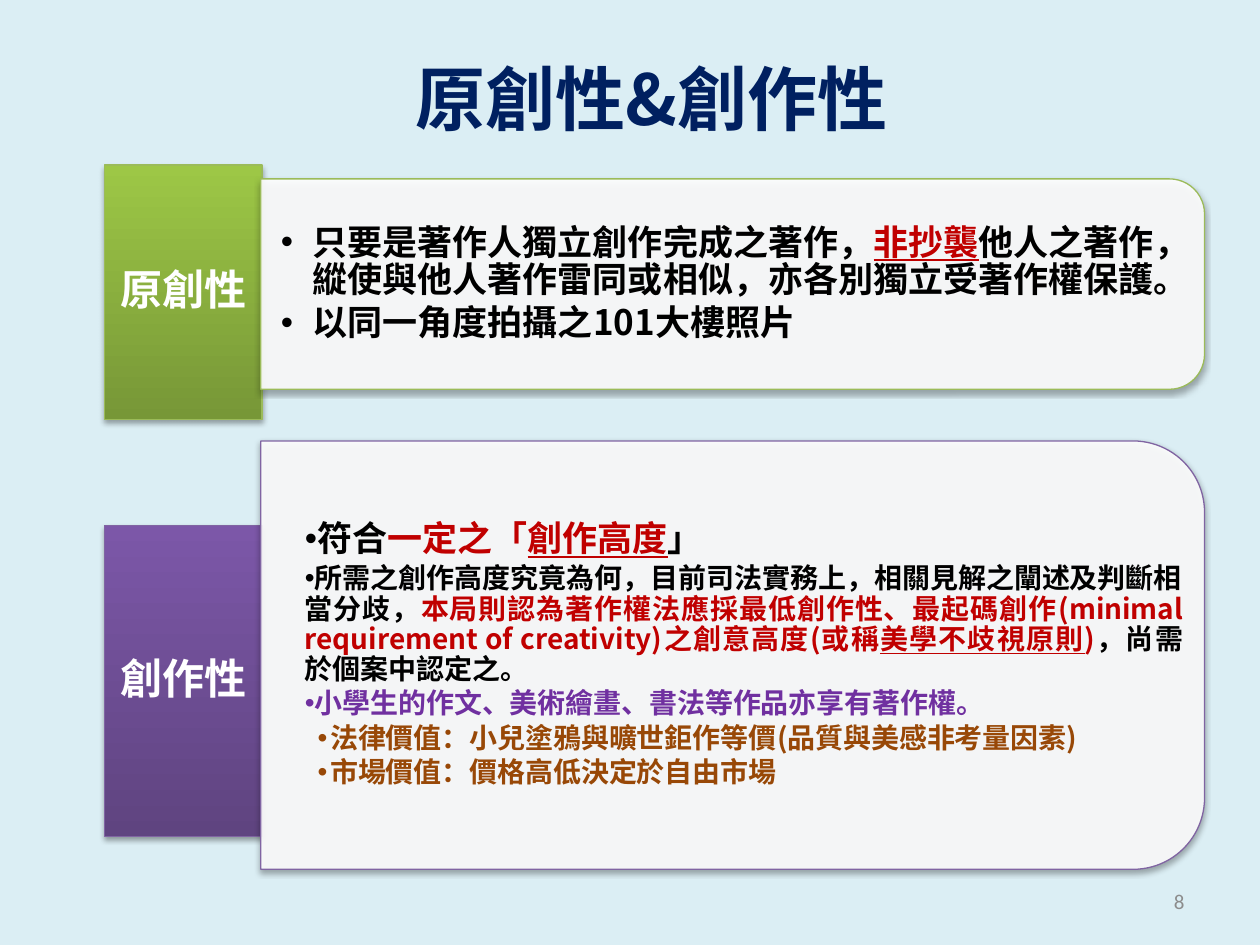
from dataclasses import dataclass

import lxml.etree
import pptx
import pptx.dml.color
import pptx.enum.shapes
import pptx.enum.text
import pptx.oxml
import pptx.oxml.ns
import pptx.util

COLUMNS, ROWS = 100, 75
CELL = pptx.util.Inches(0.1)
ALIGN = pptx.enum.text.PP_ALIGN
SHAPE = pptx.enum.shapes.MSO_SHAPE


@dataclass(frozen=True)
class Theme:
    font: str = "Noto Sans CJK SC"
    number_font: str = "Calibri"
    background: str = "DBEEF4"
    navy: str = "002060"
    black: str = "000000"
    white: str = "FFFFFF"
    red: str = "C00000"
    purple: str = "7030A0"
    brown: str = "984807"
    gray: str = "8C8C8C"
    green_tab: tuple = ("9DC746", "779737", "9BBB59")
    purple_tab: tuple = ("7C57A8", "5F4480", "8064A2")
    title_size: int = 40
    label_size: int = 24
    lead_size: int = 20
    detail_size: int = 16
    number_size: int = 12


THEME = Theme()


def rgb(color):
    return pptx.dml.color.RGBColor.from_string(color)


def grid(*cells):
    return [round(cell * CELL) for cell in cells]


def place(item, cells):
    item.left, item.top, item.width, item.height = grid(*cells)


def add_run(paragraph, text, size, color, bold=True, underline=None, font=THEME.font):
    run = paragraph.add_run()
    run.text = text
    run.font.size = pptx.util.Pt(size)
    run.font.bold = bold
    run.font.underline = underline
    run.font.color.rgb = rgb(color)
    run.font.name = font
    east_asian = lxml.etree.SubElement(run.font._element, pptx.oxml.ns.qn("a:ea"))
    east_asian.set("typeface", font)


def set_frame(frame, insets=None):
    frame.word_wrap = True
    frame.auto_size = pptx.enum.text.MSO_AUTO_SIZE.NONE
    frame.vertical_anchor = pptx.enum.text.MSO_ANCHOR.MIDDLE
    if insets:
        (frame.margin_left, frame.margin_top,
         frame.margin_right, frame.margin_bottom) = grid(*insets)


def add_shadow(item):
    item.shadow.inherit = False
    effects = item.element.spPr.find(pptx.oxml.ns.qn("a:effectLst"))
    effects.append(pptx.oxml.parse_xml(
        f'<a:outerShdw {pptx.oxml.ns.nsdecls("a")} blurRad="40000" dist="23000" '
        'dir="5400000" rotWithShape="0"><a:srgbClr val="000000">'
        '<a:alpha val="35000"/></a:srgbClr></a:outerShdw>'))


def set_outline(item, color):
    item.line.color.rgb = rgb(color)
    item.line.width = pptx.util.Pt(0.75)


def add_tab(slide, label, cells, colors):
    tab = slide.shapes.add_shape(SHAPE.FLOWCHART_PROCESS, *grid(*cells))
    top, bottom, outline = colors
    tab.fill.gradient()
    tab.fill.gradient_angle = 270
    for stop, color in zip(tab.fill.gradient_stops, (top, bottom)):
        stop.color.rgb = rgb(color)
    set_outline(tab, outline)
    add_shadow(tab)
    set_frame(tab.text_frame, (0.2, 0.2, 0.2, 0.2))
    paragraph = tab.text_frame.paragraphs[0]
    paragraph.alignment = ALIGN.CENTER
    paragraph.line_spacing = 0.9
    add_run(paragraph, label, THEME.label_size, THEME.white)


def add_panel(slide, cells, outline):
    left, top, width, height = cells
    turned = (left + (width - height) / 2, top + (height - width) / 2, height, width)
    panel = slide.shapes.add_shape(SHAPE.ROUND_2_SAME_RECTANGLE, *grid(*turned))
    panel.rotation = 90
    panel.fill.solid()
    panel.fill.fore_color.rgb = rgb(THEME.white)
    white = panel.element.spPr.find(".//" + pptx.oxml.ns.qn("a:srgbClr"))
    lxml.etree.SubElement(white, pptx.oxml.ns.qn("a:alpha")).set("val", "90000")
    set_outline(panel, outline)
    add_shadow(panel)


def set_bullet(paragraph, margin, indent):
    properties = paragraph._p.get_or_add_pPr()
    properties.set("marL", str(grid(margin)[0]))
    properties.set("indent", str(grid(indent)[0]))
    lxml.etree.SubElement(properties, pptx.oxml.ns.qn("a:buChar")).set("char", "•")


def fill_list(body, cells, points):
    place(body, cells)
    body.element.getparent().append(body.element)
    frame = body.text_frame
    set_frame(frame, (1.6, 0.1, 0.1, 0.1))
    for index, (size, alignment, margin, indent, pieces) in enumerate(points):
        paragraph = frame.add_paragraph() if index else frame.paragraphs[0]
        paragraph.level = 1
        paragraph.alignment = alignment
        paragraph.line_spacing = 0.9
        paragraph.space_before = pptx.util.Pt(0)
        paragraph.space_after = pptx.util.Pt(size * 0.15)
        set_bullet(paragraph, margin, indent)
        for text, color, *underline in pieces:
            add_run(paragraph, text, size, color, underline=bool(underline))


def fill_title(title, text):
    place(title, (6.7, 2.9, 90, 9.6))
    set_frame(title.text_frame)
    paragraph = title.text_frame.paragraphs[0]
    paragraph.alignment = ALIGN.CENTER
    add_run(paragraph, text, THEME.title_size, THEME.navy)


def add_page_number(slide, number):
    box = slide.shapes.add_textbox(*grid(71.7, 69.5, 23.3, 4))
    set_frame(box.text_frame)
    paragraph = box.text_frame.paragraphs[0]
    paragraph.alignment = ALIGN.RIGHT
    add_run(paragraph, number, THEME.number_size, THEME.gray, False, font=THEME.number_font)


def main():
    deck = pptx.Presentation()
    deck.slide_width, deck.slide_height = COLUMNS * CELL, ROWS * CELL
    slide = deck.slides.add_slide(deck.slide_layouts.get_by_name("Two Content"))
    slide.background.fill.solid()
    slide.background.fill.fore_color.rgb = rgb(THEME.background)
    title, originality, creativity = slide.placeholders
    lead, detail = THEME.lead_size, THEME.detail_size
    black, red = THEME.black, THEME.red

    fill_title(title, "原創性&創作性")

    add_tab(slide, "原創性", (8.3, 13.1, 12.5, 20.2), THEME.green_tab)
    add_panel(slide, (20.7, 14.2, 74.9, 16.7), THEME.green_tab[-1])
    fill_list(originality, (20.7, 15, 74.1, 15.1), [
        (lead, ALIGN.LEFT, 2.5, -2.5, [
            ("只要是著作人獨立創作完成之著作，", black),
            ("非抄襲", red, "underline"),
            ("他人之著作，縱使與他人著作雷同或相似，亦各別獨立受著作權保護。", black)]),
        (lead, ALIGN.LEFT, 2.5, -2.5, [("以同一角度拍攝之101大樓照片", black)]),
    ])

    add_tab(slide, "創作性", (8.3, 41.7, 12.5, 24.7), THEME.purple_tab)
    add_panel(slide, (20.7, 35, 74.9, 34), THEME.purple_tab[-1])
    fill_list(creativity, (20.7, 36.7, 73.3, 30.6), [
        (lead, ALIGN.LEFT, 1.9, 0, [
            ("符合", black), ("一定之「", red),
            ("創作高度", red, "underline"), ("」", black)]),
        (detail, ALIGN.JUSTIFY, 1.9, 0, [
            ("所需之創作高度究竟為何，目前司法實務上，相關見解之闡述及判斷相當分歧，", black),
            ("本局則認為著作權法應採最低創作性、最起碼創作"
             "(minimal requirement of creativity)之創意高度(或稱", red),
            ("美學不歧視原則", red, "underline"), (")", red),
            ("，尚需於個案中認定之。", black)]),
        (detail, ALIGN.JUSTIFY, 1.9, 0, [
            ("小學生的作文、美術繪畫、書法等作品亦享有著作權。", THEME.purple)]),
        (detail, ALIGN.JUSTIFY, 3.9, -1, [
            ("法律價值：小兒塗鴉與曠世鉅作等價(品質與美感非考量因素)", THEME.brown)]),
        (detail, ALIGN.LEFT, 3.9, -1, [
            ("市場價值：價格高低決定於自由市場", THEME.brown)]),
    ])

    add_page_number(slide, "8")
    deck.save("out.pptx")


if __name__ == "__main__":
    main()
